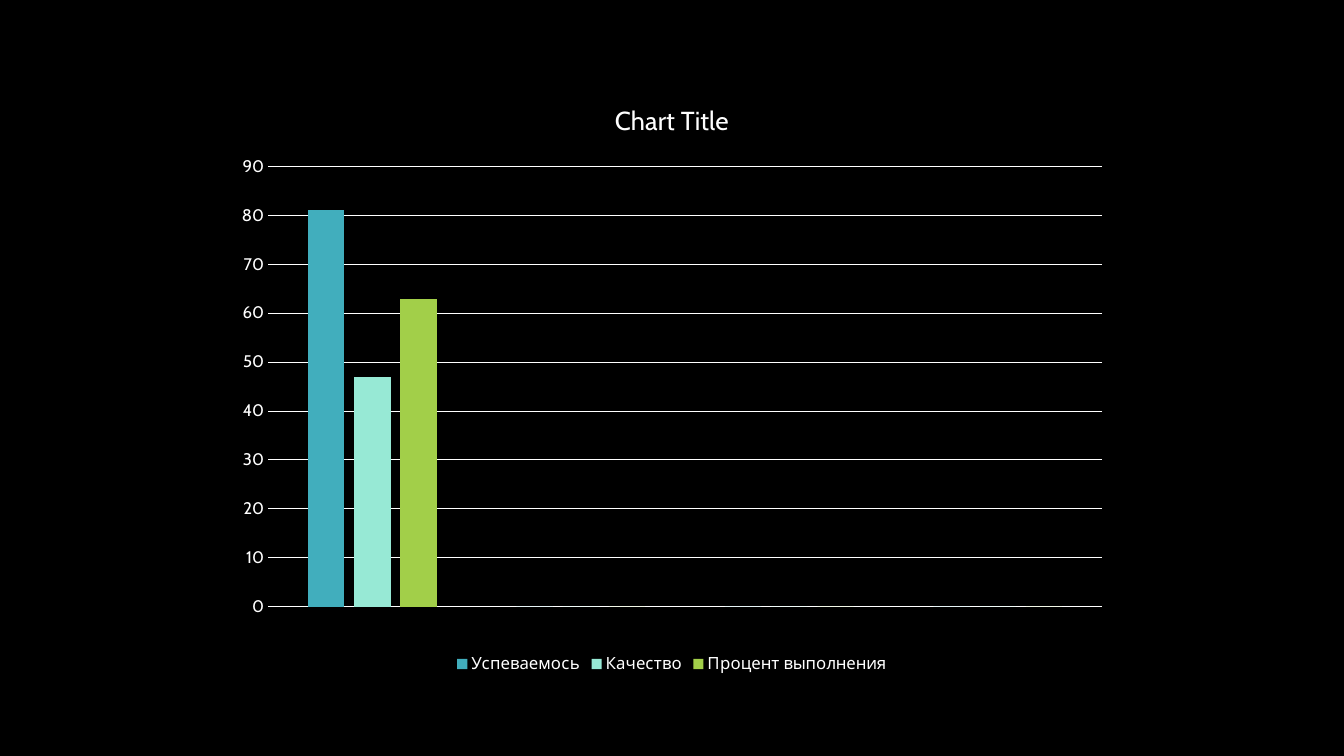
import pptx
import pptx.chart.data
import pptx.dml.color
import pptx.enum.chart
import pptx.util

EMU_PER_PX = 914400 / 100.8
COLORS = {
    "background": "000000",
    "text": "FFFFFF",
    "Успеваемось": "41AEBD",
    "Качество": "97E9D5",
    "Процент выполнения": "A2CF49",
}
RESULTS = {
    "Успеваемось": (81, 0, 0, 0),
    "Качество": (47, 0, 0, 0),
    "Процент выполнения": (63, 0, 0, 0),
}


def px(length):
    return pptx.util.Emu(round(length * EMU_PER_PX))


def color(name):
    return pptx.dml.color.RGBColor.from_string(COLORS[name])


# Slide with black background
deck = pptx.Presentation()
deck.slide_width, deck.slide_height = px(1344), px(756)
slide = deck.slides.add_slide(deck.slide_layouts[6])
slide.background.fill.solid()
slide.background.fill.fore_color.rgb = color("background")

# Clustered columns
results = pptx.chart.data.CategoryChartData(number_format="General")
results.categories = [" "] * 4
for name, values in RESULTS.items():
    results.add_series(name, values)
chart = slide.shapes.add_chart(
    pptx.enum.chart.XL_CHART_TYPE.COLUMN_CLUSTERED,
    px(224), px(80), px(896), px(598), results,
).chart
columns = chart.plots[0]
for setting, value in {"gap_width": 219, "overlap": -27, "vary_by_categories": False}.items():
    setattr(columns, setting, value)
for series in columns.series:
    series.format.fill.solid()
    series.format.fill.fore_color.rgb = color(series.name)
    series.invert_if_negative = False

# Title and legend
chart.has_title = True
heading = chart.chart_title.text_frame
heading.text = "Chart Title"
chart.has_legend = True
legend = chart.legend
legend.position = pptx.enum.chart.XL_LEGEND_POSITION.BOTTOM
legend.include_in_layout = False

# Axes and gridlines
categories, scale = chart.category_axis, chart.value_axis
for axis in (categories, scale):
    axis.major_tick_mark = pptx.enum.chart.XL_TICK_MARK.NONE
    axis.minor_tick_mark = pptx.enum.chart.XL_TICK_MARK.NONE
for setting, value in {"minimum_scale": 0, "maximum_scale": 90, "major_unit": 10}.items():
    setattr(scale, setting, value)
scale.format.line.fill.background()
for line in (categories.format.line, scale.major_gridlines.format.line):
    line.color.rgb = color("text")
    line.width = pptx.util.Pt(0.75)

# Fonts
for font, size in (
    (chart.font, 10),
    (heading.paragraphs[0].runs[0].font, 18.6),
    (legend.font, 12),
    (categories.tick_labels.font, 12),
    (scale.tick_labels.font, 12),
):
    text_format = {"name": "Cabin", "size": pptx.util.Pt(size), "bold": False}
    for setting, value in text_format.items():
        setattr(font, setting, value)
    font.color.rgb = color("text")

deck.save("out.pptx")
